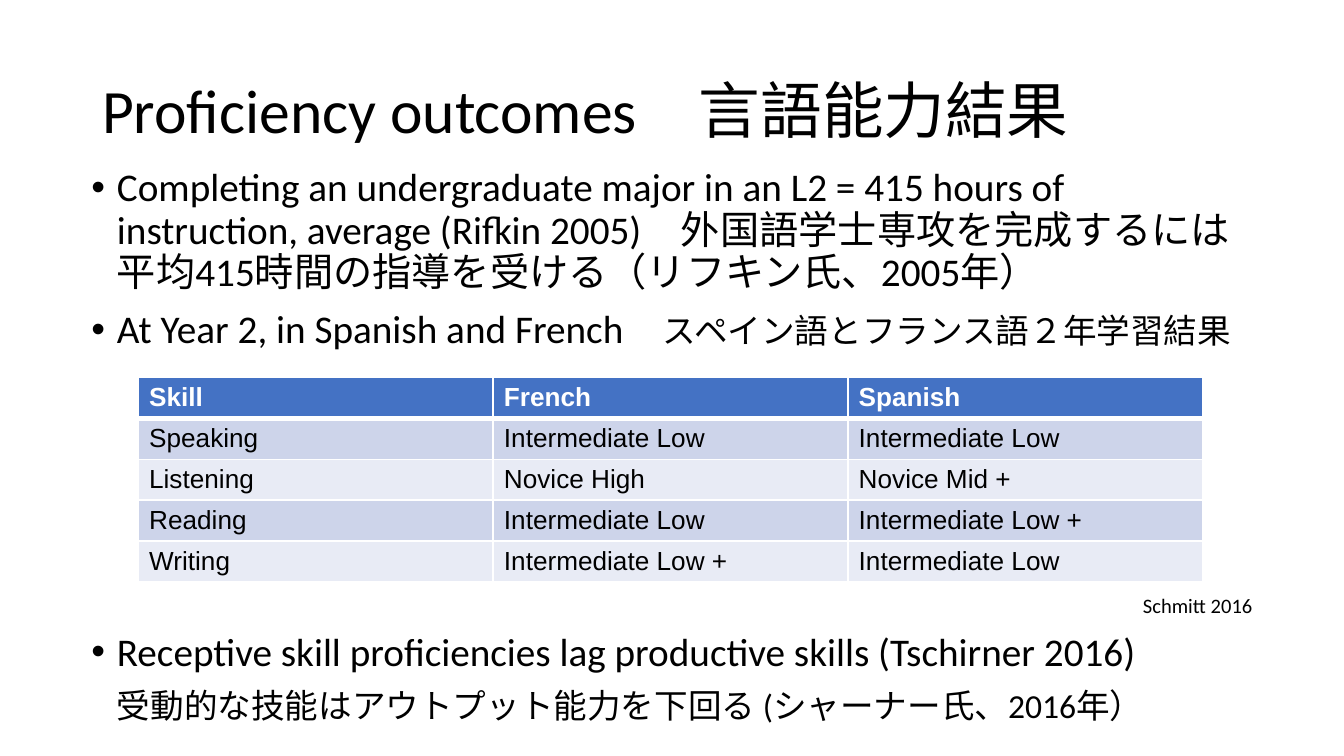
from lxml.etree import SubElement
from pptx import Presentation
from pptx.dml.color import RGBColor
from pptx.enum.text import MSO_ANCHOR, MSO_AUTO_SIZE, PP_ALIGN
from pptx.oxml import parse_xml
from pptx.oxml.ns import nsdecls, qn
from pptx.util import Inches, Pt

BLACK = RGBColor(0x00, 0x00, 0x00)
WHITE = RGBColor(0xFF, 0xFF, 0xFF)
HEADER_BLUE = RGBColor(0x44, 0x72, 0xC4)
BAND_DARK = RGBColor(0xCD, 0xD4, 0xEA)
BAND_LIGHT = RGBColor(0xE8, 0xEB, 0xF5)

OUTCOMES = [
    ("Skill", "French", "Spanish"),
    ("Speaking", "Intermediate Low", "Intermediate Low"),
    ("Listening", "Novice High", "Novice Mid +"),
    ("Reading", "Intermediate Low", "Intermediate Low +"),
    ("Writing", "Intermediate Low +", "Intermediate Low"),
]


def format_frame(frame, anchor):
    frame.word_wrap = True
    frame.auto_size = MSO_AUTO_SIZE.NONE
    frame.vertical_anchor = anchor
    frame.margin_left = frame.margin_right = Inches(0.07)
    frame.margin_top = frame.margin_bottom = Inches(0.04)


def format_font(font, size, name="Calibri", color=BLACK, bold=False):
    font.size = Pt(size)
    font.name = name
    font.color.rgb = color
    font.bold = bold


def add_title(page, text):
    title = page.shapes.title
    title.left, title.top = Inches(0.69), Inches(0.3)
    title.width, title.height = Inches(8.62), Inches(1.09)
    format_frame(title.text_frame, MSO_ANCHOR.MIDDLE)
    para = title.text_frame.paragraphs[0]
    para.text = text
    para.alignment = PP_ALIGN.LEFT
    para.line_spacing = 0.9
    format_font(para.font, 33)


def add_body(page, top, height):
    box = page.shapes.add_textbox(Inches(0.61), Inches(top), Inches(8.78), Inches(height))
    format_frame(box.text_frame, MSO_ANCHOR.TOP)
    return box.text_frame


def add_paragraph(frame, text, size, indent=0.19, bullet=False, align=PP_ALIGN.LEFT):
    """Fill the empty first paragraph, or append one with a gap above it."""
    para = frame.paragraphs[0]
    if para.runs:
        para = frame.add_paragraph()
        para.space_before = Pt(8)
    para.add_run().text = text
    para.alignment = align
    para.line_spacing = 0.9
    format_font(para.font, size)
    properties = para._p.get_or_add_pPr()
    properties.set("marL", str(Inches(indent)))
    properties.set("indent", str(-Inches(indent) if bullet else 0))
    if bullet:
        mark_font = SubElement(properties, qn("a:buFont"), typeface="Arial")
        mark = SubElement(properties, qn("a:buChar"), char="•")
        # Bullet marks come before the default run properties
        defaults = properties.find(qn("a:defRPr"))
        defaults.addprevious(mark_font)
        defaults.addprevious(mark)
    return para


def set_borders(cell, bottom):
    widths = {"lnL": 1, "lnR": 1, "lnT": 1, "lnB": bottom}
    for index, (side, width) in enumerate(widths.items()):
        line = parse_xml(
            f'<a:{side} {nsdecls("a")} w="{Pt(width)}"><a:solidFill>'
            f'<a:srgbClr val="{WHITE}"/></a:solidFill></a:{side}>'
        )
        cell._tc.get_or_add_tcPr().insert(index, line)


def add_outcome_table(page, rows):
    column_width, table_height = Inches(2.64), Inches(1.52)
    columns = len(rows[0])
    table = page.shapes.add_table(
        len(rows), columns, Inches(1.03), Inches(2.81),
        column_width * columns, table_height,
    ).table
    for column in table.columns:
        column.width = column_width
    for row_index, texts in enumerate(rows):
        header = row_index == 0
        band = BAND_DARK if row_index % 2 else BAND_LIGHT
        table.rows[row_index].height = table_height // len(rows)
        for column_index, text in enumerate(texts):
            cell = table.cell(row_index, column_index)
            cell.text = text
            cell.margin_left = cell.margin_right = Inches(0.08)
            cell.margin_top = cell.margin_bottom = Inches(0.04)
            cell.fill.solid()
            cell.fill.fore_color.rgb = HEADER_BLUE if header else band
            set_borders(cell, bottom=3 if header else 1)
            format_font(cell.text_frame.paragraphs[0].font, 14, "Arial",
                        WHITE if header else BLACK, bold=header)


def main():
    # Widescreen page, 16:9
    deck = Presentation()
    deck.slide_width, deck.slide_height = Inches(10), Inches(10 * 9 / 16)
    page = deck.slides.add_slide(deck.slide_layouts[5])

    add_title(page, "Proficiency outcomes　言語能力結果")

    # Points above the table
    upper = add_body(page, 1.21, 1.5)
    add_paragraph(
        upper,
        "Completing an undergraduate major in an L2 = 415 hours of instruction, "
        "average (Rifkin 2005)　外国語学士専攻を完成するには平均415時間の指導を受ける"
        "（リフキン氏、2005年）",
        21, bullet=True,
    )
    year_two = add_paragraph(upper, "At Year 2, in Spanish and French　", 21, bullet=True)
    span = year_two.add_run()
    span.text = "スペイン語とフランス語２年学習結果"
    span.font.size = Pt(18)

    add_outcome_table(page, OUTCOMES)

    # Table source and the closing point
    lower = add_body(page, 4.39, 1.15)
    add_paragraph(lower, "Schmitt 2016", 11, indent=0, align=PP_ALIGN.RIGHT)
    add_paragraph(
        lower, "Receptive skill proficiencies lag productive skills (Tschirner 2016)",
        21, bullet=True,
    )
    add_paragraph(lower, "受動的な技能はアウトプット能力を下回る (シャーナー氏、2016年）", 18)

    deck.save("out.pptx")


if __name__ == "__main__":
    main()
